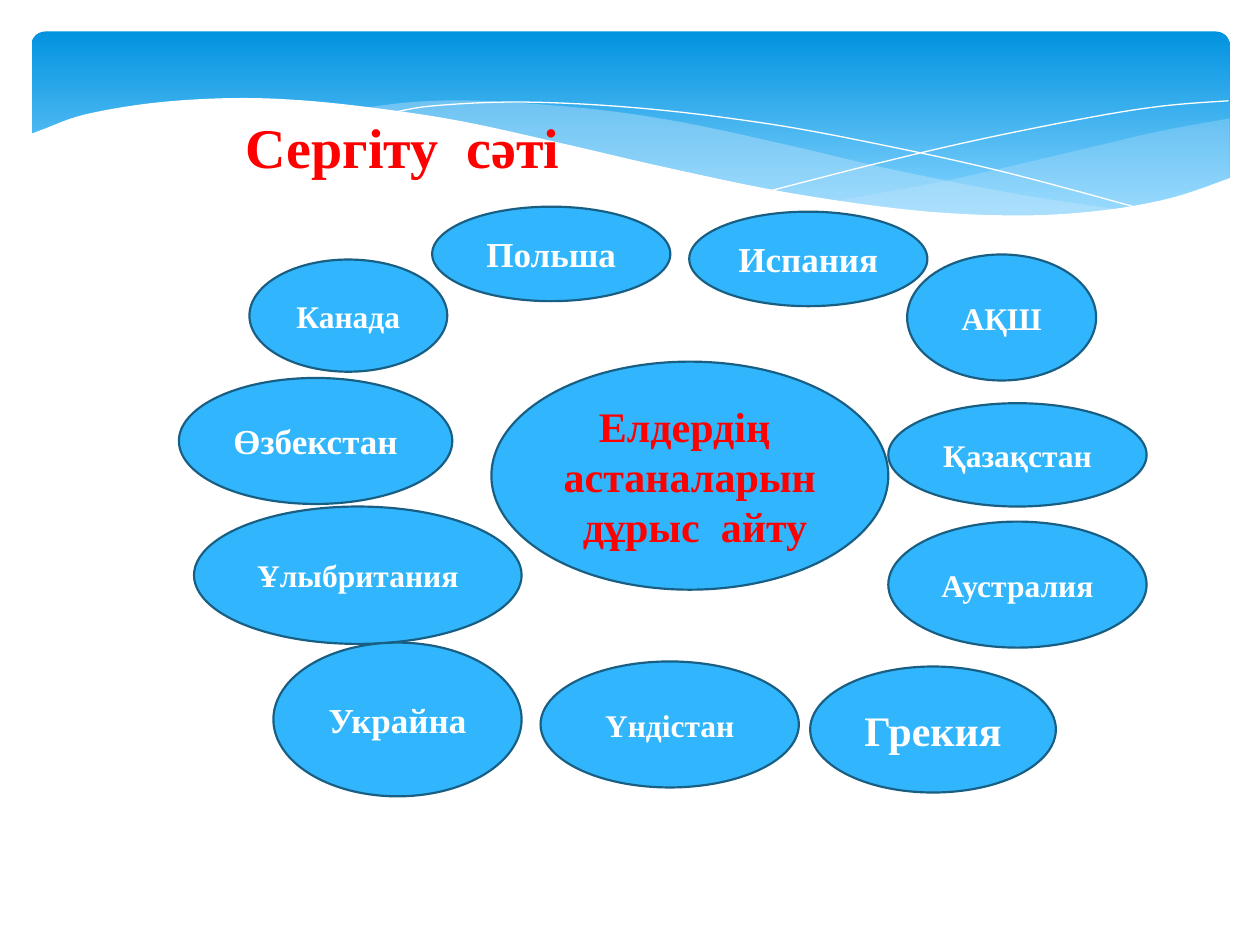
from lxml import etree
from pptx import Presentation
from pptx import util as u
from pptx.dml.color import RGBColor
from pptx.enum import shapes, text
from pptx.oxml.ns import qn

FONT = "Times New Roman"
RED, WHITE, SKY, NAVY, MIST = "FF0000", "FFFFFF", "31B6FD", "195F84", "C6E7FC"

HEADING = ("Сергіту  сәті", (1.85, 0.84, 2.72, 0.64))
TASK = ("Елдердің  астаналарын  дұрыс  айту", 24, (3.9, 2.87, 3.15, 1.81))
COUNTRIES = [
    ("АҚШ", 18, (7.2, 2.02, 1.5, 1)),
    ("Аустралия", 18, (7.05, 4.14, 2.05, 1)),
    ("Канада", 18, (1.98, 2.06, 1.57, 0.89)),
    ("Ұлыбритания", 18, (1.54, 4.02, 2.6, 1.09)),
    ("Үндістан", 18, (4.29, 5.25, 2.05, 1)),
    ("Польша", 20, (3.43, 1.64, 1.89, 0.75)),
    ("Испания", 20, (5.47, 1.68, 1.89, 0.75)),
    ("Қазақстан", 18, (7.05, 3.2, 2.05, 0.82)),
    ("Өзбекстан", 20, (1.42, 3, 2.17, 1)),
    ("Украйна", 20, (2.17, 5.1, 1.97, 1.22)),
    ("Грекия", 24, (6.43, 5.29, 1.95, 1)),
]

BANNER = (0.25, 0.25, 9.51, 1.56)
RIGHT_VEIL = [
    [(9.76, 0.94), (9.21, 1.04), (8.61, 1.18), (7.53, 1.43), (6.61, 1.6)],
    [(6.61, 1.6), (7.32, 1.68), (8.03, 1.72), (8.72, 1.69), (9.28, 1.58), (9.76, 1.41)],
]
LEFT_VEIL = [
    [(8.93, 1.67), (8.07, 1.54), (7.06, 1.34), (6.29, 1.16), (5.41, 0.97),
     (4.65, 0.86), (3.8, 0.8), (3.28, 0.81), (2.86, 0.86)],
    [(2.86, 0.86), (3.62, 0.97), (4.49, 1.16), (5.66, 1.43), (6.5, 1.58),
     (7.36, 1.69), (8.07, 1.73), (8.57, 1.71), (8.93, 1.67)],
]
FALLING_LINE = [[(3.09, 0.9), (3.44, 0.84), (4.16, 0.81), (5.1, 0.86), (6.08, 0.98),
                 (6.95, 1.14), (7.95, 1.36), (9.07, 1.66)]]
RISING_LINE = [[(6.13, 1.51), (6.95, 1.3), (7.76, 1.11), (8.66, 0.93), (9.24, 0.84), (9.75, 0.8)]]
WHITE_WAVE = [
    [(9.77, 1.41), (9.3, 1.57), (8.75, 1.67), (8.09, 1.71), (7.26, 1.67), (6.26, 1.53),
     (5.29, 1.33), (4.47, 1.14), (3.65, 0.96), (2.92, 0.85), (2.3, 0.79), (1.77, 0.78),
     (1.19, 0.82), (0.67, 0.91), (0.36, 1.02), (0.23, 1.07)],
    [(0.23, 2.24), (9.77, 2.24)],
]


def rgb(code):
    return RGBColor.from_string(code)


def inches(box):
    return [u.Inches(length) for length in box]


def smooth(knots, steps=6):
    """Return points on a Catmull-Rom curve through the knots."""
    if len(knots) < 3:
        return knots
    padded = [knots[0], *knots, knots[-1]]
    curve = [knots[0]]
    for a, b, c, d in zip(padded, padded[1:], padded[2:], padded[3:]):
        for t in (step / steps for step in range(1, steps + 1)):
            curve.append(tuple(
                q + t * (r - p) / 2 + t**2 * (2 * p - 5 * q + 4 * r - s) / 2
                + t**3 * (3 * q - p - 3 * r + s) / 2
                for p, q, r, s in zip(a, b, c, d)))
    return curve


def add_wave(slide, edges, fill=None, opacity=100):
    """Draw curved edges as a filled area, or as a white hairline without fill."""
    start, *rest = [inches(point) for edge in edges for point in smooth(edge)]
    builder = slide.shapes.build_freeform(*start)
    builder.add_line_segments(rest, close=fill is not None)
    wave = builder.convert_to_shape()
    wave.shadow.inherit = False
    if fill is None:
        wave.fill.background()
        wave.line.color.rgb = rgb(WHITE)
        wave.line.width = u.Pt(0)
        return
    wave.fill.solid()
    wave.fill.fore_color.rgb = rgb(fill)
    wave.line.fill.background()
    if opacity < 100:
        color = wave.element.spPr.find(qn("a:solidFill"))[0]
        etree.SubElement(color, qn("a:alpha"), val=str(opacity * 1000))


def add_banner(slide):
    banner = slide.shapes.add_shape(shapes.MSO_SHAPE.ROUNDED_RECTANGLE, *inches(BANNER))
    banner.adjustments[0] = 0.07
    banner.shadow.inherit = False
    banner.line.fill.background()
    banner.fill.gradient()
    banner.fill.gradient_angle = 270
    for stop, code, position in zip(banner.fill.gradient_stops, ("0293E0", "83D3FE"), (0, 0.9)):
        stop.color.rgb = rgb(code)
        stop.position = position


def write(holder, words, size, color, align=text.PP_ALIGN.CENTER,
          anchor=text.MSO_ANCHOR.MIDDLE, wrap=True):
    """Put bold formatted words into a shape."""
    frame = holder.text_frame
    frame.text = words
    frame.word_wrap = wrap
    frame.vertical_anchor = anchor
    paragraph = frame.paragraphs[0]
    paragraph.alignment = align
    font = paragraph.runs[0].font
    font.name, font.size, font.bold = FONT, u.Pt(size), True
    font.color.rgb = rgb(color)


def add_oval(slide, words, size, box, color=WHITE):
    oval = slide.shapes.add_shape(shapes.MSO_SHAPE.OVAL, *inches(box))
    oval.shadow.inherit = False
    oval.fill.solid()
    oval.fill.fore_color.rgb = rgb(SKY)
    oval.line.color.rgb = rgb(NAVY)
    oval.line.width = u.Pt(1.25)
    write(oval, words, size, color)


def main():
    deck = Presentation()
    deck.slide_width, deck.slide_height = u.Inches(10), u.Inches(7.5)
    slide = deck.slides.add_slide(deck.slide_layouts[5])

    add_banner(slide)
    add_wave(slide, RIGHT_VEIL, MIST, 29)
    add_wave(slide, LEFT_VEIL, MIST, 40)
    add_wave(slide, FALLING_LINE)
    add_wave(slide, RISING_LINE)
    add_wave(slide, WHITE_WAVE, WHITE)

    words, box = HEADING
    title = slide.shapes.title
    title.element.getparent().append(title.element)
    title.left, title.top, title.width, title.height = inches(box)
    write(title, words, 32, RED, text.PP_ALIGN.LEFT, text.MSO_ANCHOR.TOP, wrap=False)

    add_oval(slide, *TASK, color=RED)
    for country in COUNTRIES:
        add_oval(slide, *country)
    deck.save("out.pptx")


if __name__ == "__main__":
    main()
